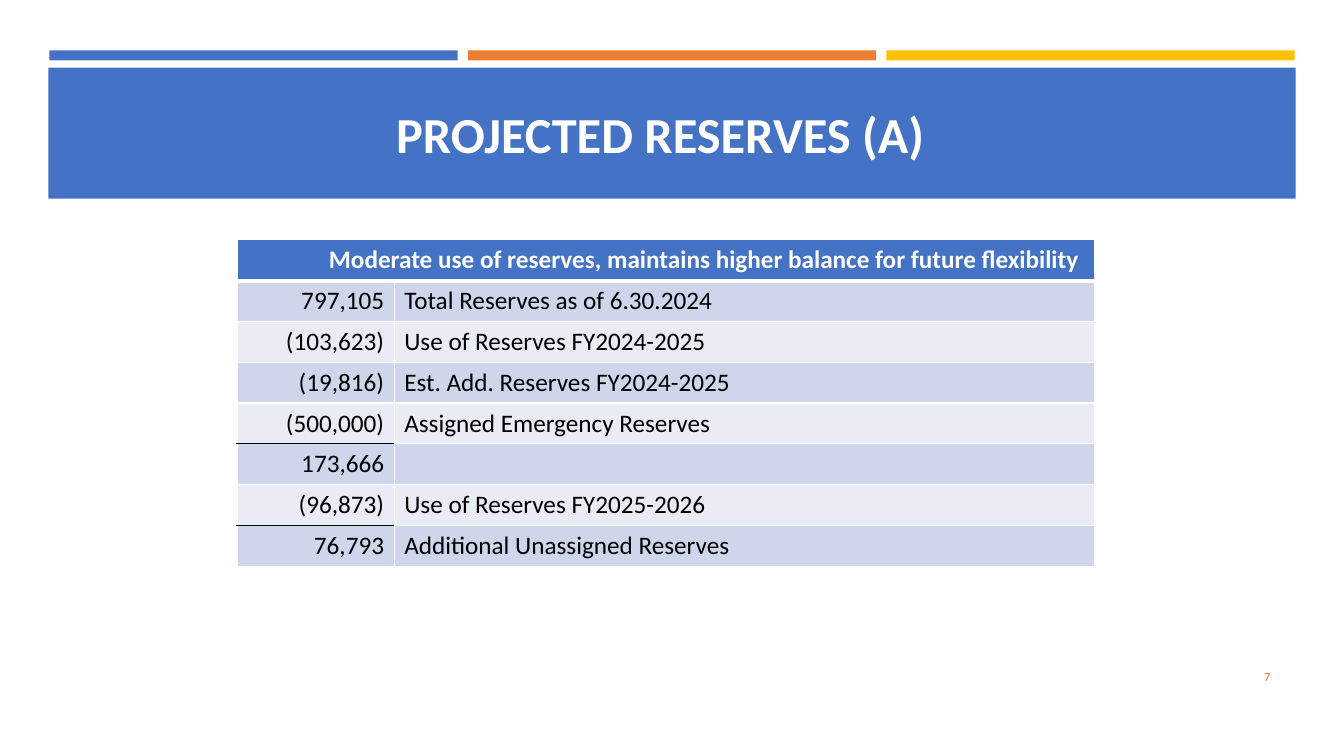
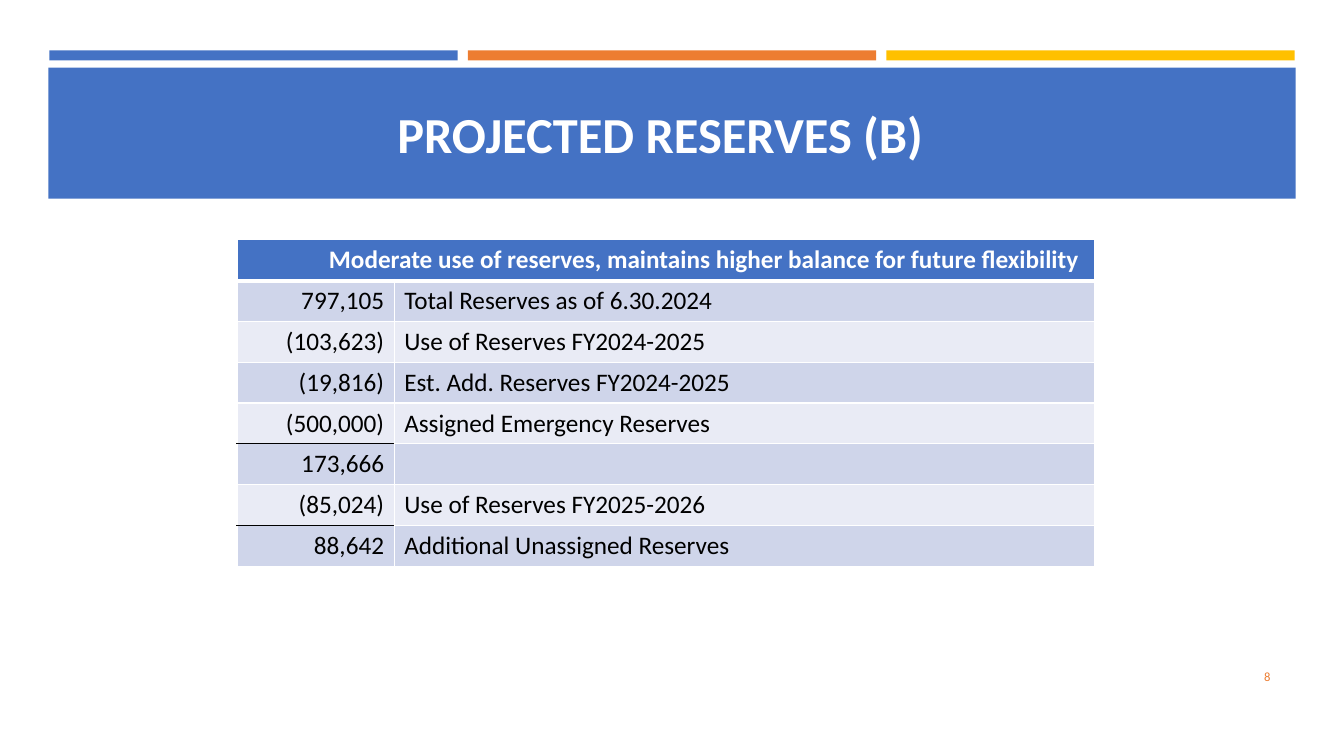
import pptx
import pptx.util
import pptx.dml.color
import pptx.enum.shapes
import pptx.enum.text
import pptx.oxml.ns
import lxml.etree

Inches, Pt = pptx.util.Inches, pptx.util.Pt
ALIGN = pptx.enum.text.PP_ALIGN
ANCHOR = pptx.enum.text.MSO_ANCHOR

COLORS = {
    "blue": "4472C4", "orange": "ED7D31", "gold": "FFC000",
    "white": "FFFFFF", "black": "000000",
    "odd_row": "CFD5EA", "even_row": "E9EBF5",
}
FONT = "Calibri"
HEADING = "Moderate use of reserves, maintains higher balance for future flexibility "
LABELS = [
    "Total Reserves as of 6.30.2024",
    "Use of Reserves FY2024-2025",
    "Est. Add. Reserves FY2024-2025",
    "Assigned Emergency Reserves",
    "",
    "Use of Reserves FY2025-2026",
    "Additional Unassigned Reserves",
]
COMMON_AMOUNTS = ["797,105", "(103,623)", "(19,816)", "(500,000)", "173,666"]
PAGES = [
    {"number": "7", "title": "PROJECTED RESERVES (A) ", "amounts": ["(96,873)", "76,793"]},
    {"number": "8", "title": "PROJECTED RESERVES (B) ", "amounts": ["(85,024)", "88,642"]},
]
SUM_LINES = (4, 6)
COLUMNS = (1.56, 6.95)
TABLE_LEFT, TABLE_TOP, TABLE_HEIGHT = 2.35, 2.38, 3.24
STRIPES = ("blue", "orange", "gold")
STRIPE_LEFT, STRIPE_WIDTH, STRIPE_GAP = 0.49, 4.05, 0.1


def rgb(name):
    return pptx.dml.color.RGBColor.from_string(COLORS[name])


def write(frame, text, size, color, align, bold=False):
    para = frame.paragraphs[0]
    para.alignment = align
    span = para.add_run()
    span.text = text
    span.font.name = FONT
    span.font.size = Pt(size)
    span.font.bold = bold
    span.font.color.rgb = rgb(color)


def add_band(page, left, top, width, height, color):
    band = page.shapes.add_shape(
        pptx.enum.shapes.MSO_SHAPE.RECTANGLE,
        Inches(left), Inches(top), Inches(width), Inches(height))
    band.shadow.inherit = False
    band.fill.solid()
    band.fill.fore_color.rgb = rgb(color)
    band.line.fill.background()
    return band


def add_shared_bands(page, layout):
    bands = [add_band(page, STRIPE_LEFT + i * (STRIPE_WIDTH + STRIPE_GAP), 0.5,
                      STRIPE_WIDTH, 0.1, color)
             for i, color in enumerate(STRIPES)]
    bands.append(add_band(page, 0.48, 0.67, 12.37, 1.3, "blue"))
    first = layout.placeholders[0].element
    for band in bands:
        first.addprevious(band.element)


def set_borders(cell, top, bottom):
    white = ("white", 1)
    sides = {"lnL": white, "lnR": white, "lnT": top, "lnB": bottom}
    properties = cell._tc.get_or_add_tcPr()
    for place, (side, (color, width)) in enumerate(sides.items()):
        line = lxml.etree.Element(pptx.oxml.ns.qn("a:" + side), w=str(Pt(width)))
        fill = lxml.etree.SubElement(line, pptx.oxml.ns.qn("a:solidFill"))
        lxml.etree.SubElement(fill, pptx.oxml.ns.qn("a:srgbClr"), val=COLORS[color])
        properties.insert(place, line)


def rule_below(row, column):
    if row == 0:
        return "white", 3
    return ("black" if column == 0 and row in SUM_LINES else "white"), 1


def add_reserves_table(page, amounts):
    rows = [(HEADING, "")] + list(zip(amounts, LABELS))
    table = page.shapes.add_table(
        len(rows), len(COLUMNS), Inches(TABLE_LEFT), Inches(TABLE_TOP),
        Inches(sum(COLUMNS)), Inches(TABLE_HEIGHT)).table
    for column, width in zip(table.columns, COLUMNS):
        column.width = Inches(width)
    for r, texts in enumerate(rows):
        table.rows[r].height = Inches(TABLE_HEIGHT / len(rows))
        color = "blue" if r == 0 else "odd_row" if r % 2 else "even_row"
        for c, text in enumerate(texts):
            cell = table.cell(r, c)
            cell.fill.solid()
            cell.fill.fore_color.rgb = rgb(color)
            above = rule_below(r - 1, c) if r else ("white", 1)
            set_borders(cell, above, rule_below(r, c))
            if text:
                write(cell.text_frame, text, 18, "black" if r else "white",
                      ALIGN.LEFT if c else ALIGN.RIGHT, bold=r == 0)
    table.cell(0, 0).merge(table.cell(0, 1))


def format_title(page, text):
    title = page.shapes.title
    title.left, title.top = Inches(3.07), Inches(0.97)
    title.width, title.height = Inches(7.07), Inches(0.71)
    frame = title.text_frame
    frame.word_wrap = False
    frame.auto_size = pptx.enum.text.MSO_AUTO_SIZE.SHAPE_TO_FIT_TEXT
    frame.vertical_anchor = ANCHOR.TOP
    write(frame, text, 36, "white", ALIGN.CENTER, bold=True)


def add_page_number(page, number):
    box = page.shapes.add_textbox(Inches(11.55), Inches(6.51), Inches(1.15), Inches(0.4))
    box.text_frame.word_wrap = True
    box.text_frame.vertical_anchor = ANCHOR.MIDDLE
    write(box.text_frame, number, 9, "orange", ALIGN.RIGHT)


def main():
    deck = pptx.Presentation()
    deck.slide_width, deck.slide_height = Inches(13.33), Inches(7.5)
    layout = deck.slide_layouts.get_by_name("Title Only")
    for index, content in enumerate(PAGES):
        page = deck.slides.add_slide(layout)
        if index == 0:
            add_shared_bands(page, layout)
        format_title(page, content["title"])
        add_reserves_table(page, COMMON_AMOUNTS + content["amounts"])
        add_page_number(page, content["number"])
    deck.save("out.pptx")


if __name__ == "__main__":
    main()
